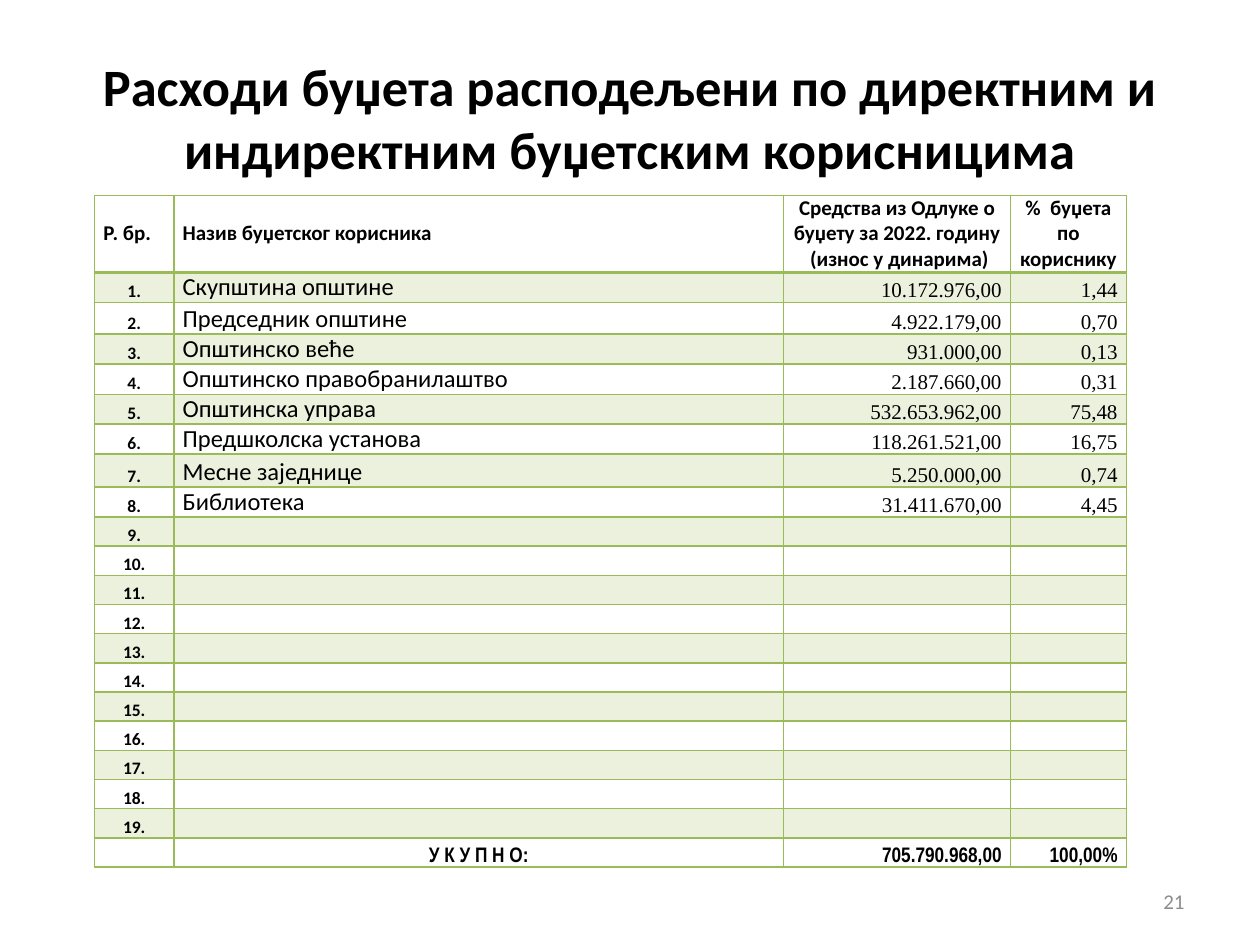
from lxml import etree
from pptx import Presentation
from pptx.dml.color import RGBColor
from pptx.enum.text import MSO_ANCHOR, PP_ALIGN
from pptx.oxml.ns import qn
from pptx.util import Inches, Pt

LEFT, CENTER, RIGHT = PP_ALIGN.LEFT, PP_ALIGN.CENTER, PP_ALIGN.RIGHT
MIDDLE, BOTTOM = MSO_ANCHOR.MIDDLE, MSO_ANCHOR.BOTTOM
PLAIN_TABLE = "{2D5ABB26-0587-4C30-8999-92F81FD0307C}"
GREEN, BLACK, GRAY = "9BBB59", "000000", "8C8C8C"

HEADER = ["Р. бр.", "Назив буџетског корисника",
          "Средства из Одлуке о буџету за 2022. годину  (износ у динарима)",
          "%  буџета по кориснику"]
USERS = [
    ("Скупштина општине", "10.172.976,00", "1,44"),
    ("Председник општине", "4.922.179,00", "0,70"),
    ("Општинско веће", "931.000,00", "0,13"),
    ("Општинско правобранилаштво", "2.187.660,00", "0,31"),
    ("Општинска управа", "532.653.962,00", "75,48"),
    ("Предшколска установа", "118.261.521,00", "16,75"),
    ("Месне заједнице", "5.250.000,00", "0,74"),
    ("Библиотека", "31.411.670,00", "4,45"),
]
TOTAL = ["", "У К У П Н О:", "705.790.968,00", "100,00%"]
NUMBERED = 19

HEAD_STYLES = [(12, "Calibri", True, align) for align in (LEFT, LEFT, CENTER, CENTER)]
BODY_STYLES = [(10, "Calibri", True, CENTER), (14, "Calibri", False, LEFT),
               (12, "Times New Roman", False, RIGHT), (12, "Times New Roman", False, RIGHT)]
TOTAL_STYLES = [(12, "Arial Narrow", True, align) for align in (CENTER, CENTER, RIGHT, RIGHT)]


def rgb(value):
    """Turn a hex string into a colour."""
    return RGBColor.from_string(value)


class Deck:
    """Holds the style, the grid and the current slide."""

    UNIT = 0.05

    def __init__(self):
        """Start a presentation with one blank slide."""
        self.prs = Presentation()
        self.prs.slide_width, self.prs.slide_height = self.grid(200, 150)
        self.s = self.prs.slides.add_slide(self.prs.slide_layouts[6])

    def grid(self, *steps):
        """Convert grid steps to lengths."""
        return [Inches(step * self.UNIT) for step in steps]

    def paragraph(self, p, text, style, color=BLACK):
        """Fill a paragraph with styled text."""
        size, name, bold, p.alignment = style
        p.font.size, p.font.name, p.font.bold = Pt(size), name, bold
        p.font.color.rgb = rgb(color)
        if text:
            p.add_run().text = text
        else:
            etree.SubElement(p._p, qn("a:endParaRPr"), sz=str(size * 100))

    def text(self, at, text, style, color=BLACK):
        """Add a vertically centred text box."""
        tf = self.s.shapes.add_textbox(*self.grid(*at)).text_frame
        tf.word_wrap = True
        tf.vertical_anchor = MIDDLE
        self.paragraph(tf.paragraphs[0], text, style, color)

    def borders(self, cell, top=1, bottom=1):
        """Draw the four borders of a cell."""
        tc_pr = cell._tc.get_or_add_tcPr()
        for side, width in (("L", 1), ("R", 1), ("T", top), ("B", bottom)):
            ln = etree.SubElement(tc_pr, qn(f"a:ln{side}"), w=str(Pt(width)))
            fill = etree.SubElement(ln, qn("a:solidFill"))
            etree.SubElement(fill, qn("a:srgbClr"), val=GREEN)

    def shade(self, cell, banded):
        """Tint a banded cell and leave any other clear."""
        if not banded:
            cell.fill.background()
            return
        cell.fill.solid()
        cell.fill.fore_color.rgb = rgb(GREEN)
        tint = cell._tc.tcPr.find(f"{qn('a:solidFill')}/{qn('a:srgbClr')}")
        etree.SubElement(tint, qn("a:alpha"), val="20000")

    def table(self, left, top, widths, heights, rows, styles):
        """Add a banded table with a header row."""
        at = self.grid(left, top, sum(widths), sum(heights))
        table = self.s.shapes.add_table(len(rows), len(widths), *at).table
        table.first_row = table.horz_banding = False
        table._tbl.tblPr.find(qn("a:tableStyleId")).text = PLAIN_TABLE
        for column, width in zip(table.columns, self.grid(*widths)):
            column.width = width
        for row, height in zip(table.rows, self.grid(*heights)):
            row.height = height
        for i, (row, row_styles) in enumerate(zip(rows, styles)):
            for j, (text, style) in enumerate(zip(row, row_styles)):
                cell = table.cell(i, j)
                cell.margin_left = cell.margin_right = Inches(0.07)
                cell.margin_top = cell.margin_bottom = 0
                cell.vertical_anchor = BOTTOM if i else MIDDLE
                self.borders(cell, 2 if i == 1 else 1, 1 if i else 2)
                self.shade(cell, i % 2)
                if not text:
                    style = (10, *style[1:])
                self.paragraph(cell.text_frame.paragraphs[0], text, style)


def main():
    """Build and save the slide."""
    deck = Deck()
    deck.text((10, 6, 180, 25),
              "Расходи буџета расподељени по директним и индиректним буџетским корисницима",
              (30, "Calibri", True, CENTER))
    blank = [("", "", "")] * (NUMBERED - len(USERS))
    body = [(f"{n}.", *user) for n, user in enumerate(USERS + blank, 1)]
    heights = [12.2, 4.8, 5, 4.8, 4.8, 4.7, 4.8, 5.2, 4.8] + [4.63] * (len(blank) + 1)
    deck.table(15, 31, [12.6, 96.8, 36, 18.4], heights, [HEADER, *body, TOTAL],
               [HEAD_STYLES] + [BODY_STYLES] * NUMBERED + [TOTAL_STYLES])
    deck.text((143.4, 139, 46.6, 8), "21", (12, "Calibri", False, RIGHT), GRAY)
    deck.prs.save("out.pptx")


if __name__ == "__main__":
    main()
